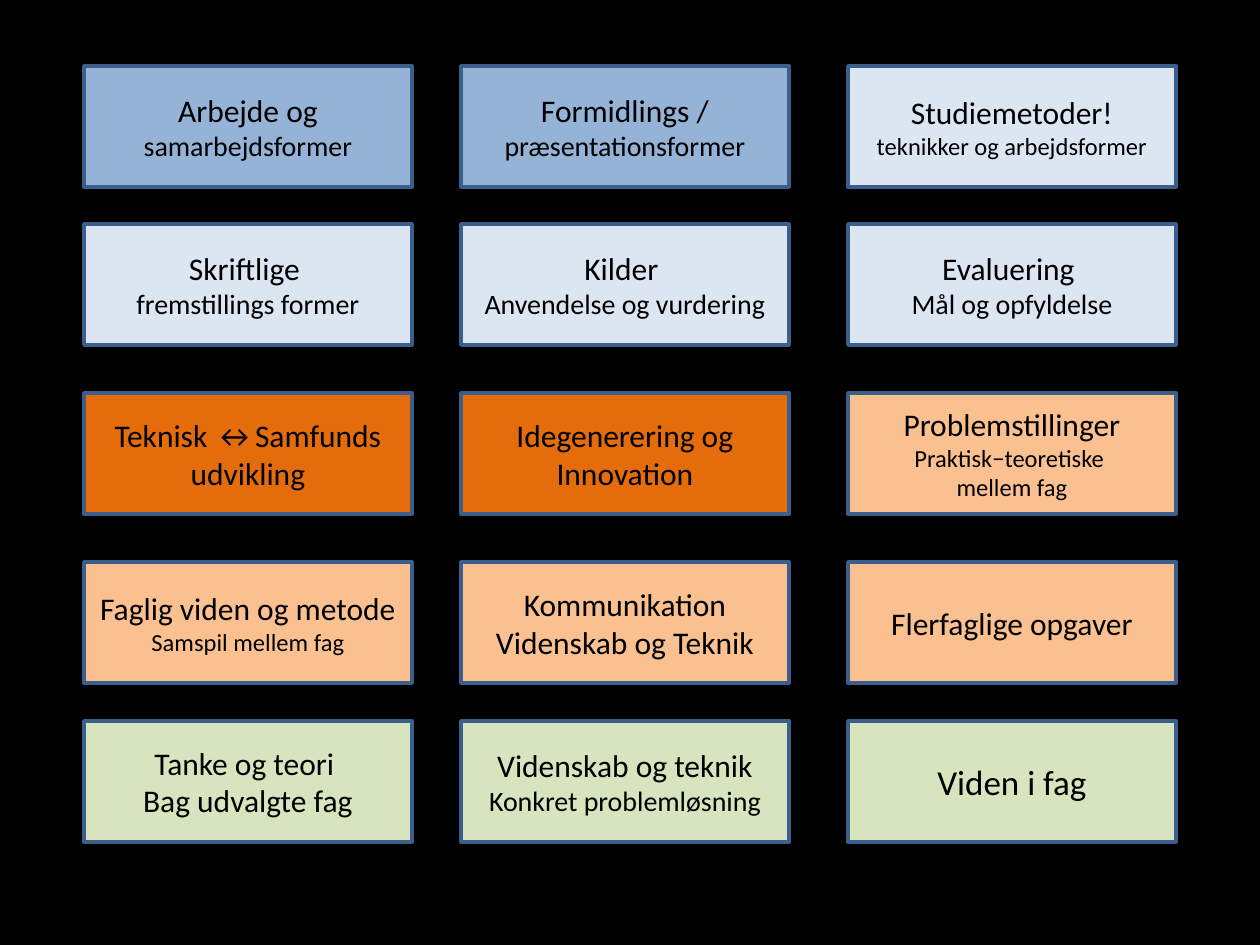
from pptx import Presentation
from pptx.dml.color import RGBColor
from pptx.enum.shapes import MSO_SHAPE
from pptx.enum.text import MSO_ANCHOR, PP_ALIGN
from pptx.util import Inches, Pt

RECTANGLE = MSO_SHAPE.RECTANGLE
MIDDLE = MSO_ANCHOR.MIDDLE
CENTER = PP_ALIGN.CENTER

BLACK = RGBColor(0x00, 0x00, 0x00)
BORDER = RGBColor(0x3A, 0x5F, 0x8C)
BLUE = RGBColor(0x95, 0xB3, 0xD7)
PALE_BLUE = RGBColor(0xDC, 0xE6, 0xF2)
ORANGE = RGBColor(0xE4, 0x6C, 0x0A)
PALE_ORANGE = RGBColor(0xFA, 0xC0, 0x90)
PALE_GREEN = RGBColor(0xD7, 0xE4, 0xBD)

PX_PER_INCH = 126
SLIDE_WIDTH, SLIDE_HEIGHT = 1260, 945
BOX_WIDTH, BOX_HEIGHT = 328, 121
COLUMN_LEFTS = (84, 461, 848)
ROW_TOPS = (66, 224, 393, 562, 721)

TOPIC_ROWS = [
    [
        (BLUE, [("Arbejde og", 18), ("samarbejdsformer", 16)]),
        (BLUE, [("Formidlings /", 18), ("præsentationsformer", 16)]),
        (PALE_BLUE, [("Studiemetoder!", 18), ("teknikker og arbejdsformer", 14)]),
    ],
    [
        (PALE_BLUE, [("Skriftlige ", 18), ("fremstillings former", 16)]),
        (PALE_BLUE, [("Kilder ", 18), ("Anvendelse og vurdering", 16)]),
        (PALE_BLUE, [("Evaluering ", 18), ("Mål og opfyldelse", 16)]),
    ],
    [
        (ORANGE, [("Teknisk ↔Samfunds", 18), ("udvikling", 18)]),
        (ORANGE, [("Idegenerering og", 18), ("Innovation", 18)]),
        (PALE_ORANGE, [("Problemstillinger", 18), ("Praktisk−teoretiske ", 14), ("mellem fag", 14)]),
    ],
    [
        (PALE_ORANGE, [("Faglig viden og metode", 18), ("Samspil mellem fag", 14)]),
        (PALE_ORANGE, [("Kommunikation", 18), ("Videnskab og Teknik", 18)]),
        (PALE_ORANGE, [("Flerfaglige opgaver", 18)]),
    ],
    [
        (PALE_GREEN, [("Tanke og teori ", 18), ("Bag udvalgte fag", 18)]),
        (PALE_GREEN, [("Videnskab og teknik", 18), ("Konkret problemløsning", 16)]),
        (PALE_GREEN, [("Viden i fag", 20)]),
    ],
]


def px(length):
    return round(length * Inches(1) / PX_PER_INCH)


class SlideBuilder:
    font_name = "Calibri"
    text_color = BLACK
    line_color = BORDER
    line_width = Pt(2)

    def __init__(self, slide):
        self.slide = slide

    def background(self, color):
        fill = self.slide.background.fill
        fill.solid()
        fill.fore_color.rgb = color

    def box(self, left, top, color, lines):
        shape = self.slide.shapes.add_shape(
            RECTANGLE, px(left), px(top), px(BOX_WIDTH), px(BOX_HEIGHT)
        )
        shape.shadow.inherit = False
        shape.fill.solid()
        shape.fill.fore_color.rgb = color
        shape.line.color.rgb = self.line_color
        shape.line.width = self.line_width
        text_frame = shape.text_frame
        text_frame.word_wrap = True
        text_frame.vertical_anchor = MIDDLE
        text_frame.text = "\n".join(text for text, size in lines)
        for paragraph, (text, size) in zip(text_frame.paragraphs, lines):
            paragraph.alignment = CENTER
            self.format_font(paragraph.runs[0].font, size)

    def format_font(self, font, size):
        for name, value in {"name": self.font_name, "size": Pt(size)}.items():
            setattr(font, name, value)
        font.color.rgb = self.text_color


def main():
    presentation = Presentation()
    presentation.slide_width = px(SLIDE_WIDTH)
    presentation.slide_height = px(SLIDE_HEIGHT)
    blank_layout = presentation.slide_layouts[6]
    builder = SlideBuilder(presentation.slides.add_slide(blank_layout))
    builder.background(BLACK)
    for top, topics in zip(ROW_TOPS, TOPIC_ROWS):
        for left, (color, lines) in zip(COLUMN_LEFTS, topics):
            builder.box(left, top, color, lines)
    presentation.save("out.pptx")


if __name__ == "__main__":
    main()
